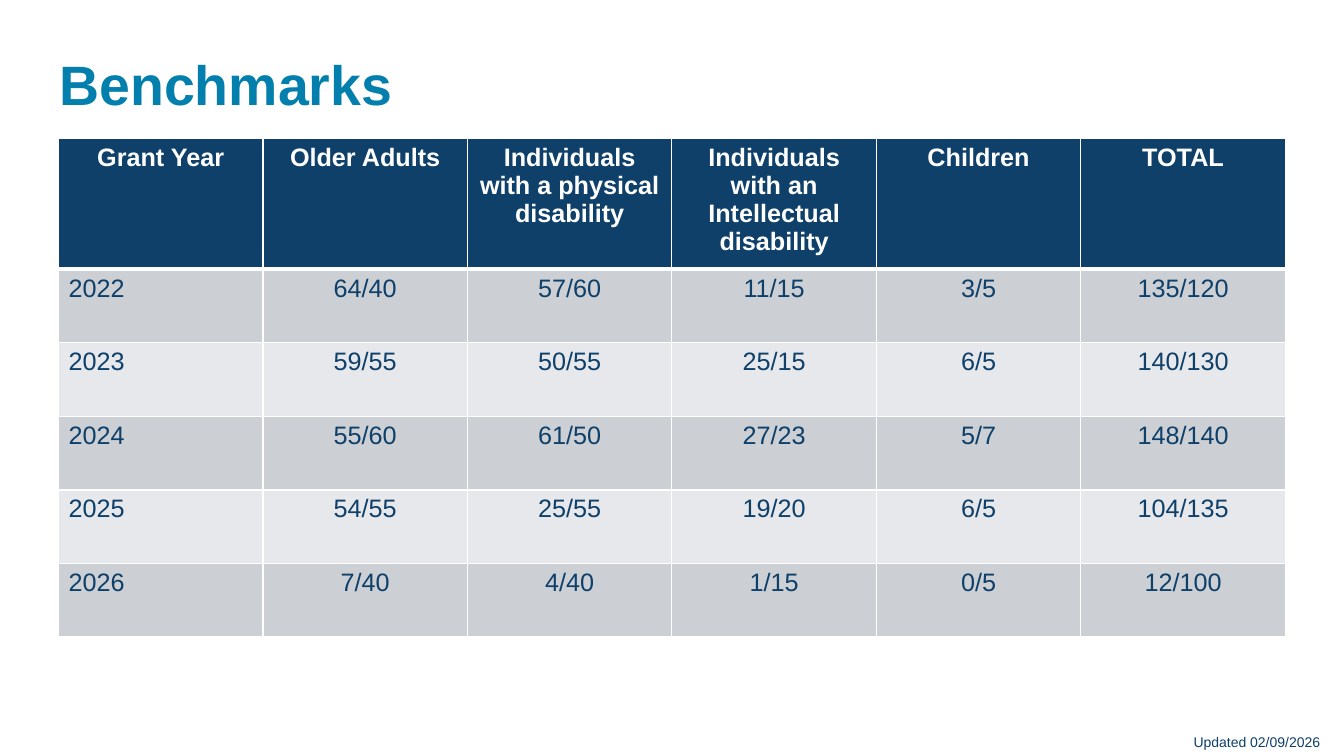
import pptx
import pptx.dml.color
import pptx.enum.text
import pptx.oxml
import pptx.oxml.ns
import pptx.util
from pptx.util import Inches

COLORS = {
    "title": "037FAE",
    "navy": "0E406A",
    "white": "FFFFFF",
    "band_dark": "CCCFD4",
    "band_light": "E7E8EB",
}
ALIGN = pptx.enum.text.PP_ALIGN


def add_run(paragraph, text, size, color, bold=False):
    run = paragraph.add_run()
    run.text = text
    run.font.name = "Arial"
    run.font.size = pptx.util.Pt(size)
    run.font.bold = bold
    run.font.color.rgb = pptx.dml.color.RGBColor.from_string(COLORS[color])


def add_borders(cell, widths):
    properties = cell._tc.get_or_add_tcPr()
    for index, (side, points) in enumerate(widths.items()):
        properties.insert(index, pptx.oxml.parse_xml(
            f'<a:{side} {pptx.oxml.ns.nsdecls("a")} w="{pptx.util.Pt(points)}">'
            f'<a:solidFill><a:srgbClr val="{COLORS["white"]}"/></a:solidFill></a:{side}>'))


presentation = pptx.Presentation()
presentation.slide_width = Inches(13.33)
presentation.slide_height = Inches(7.5)
slide = presentation.slides.add_slide(presentation.slide_layouts[6])

# Title
title = slide.shapes.add_textbox(Inches(0.49), Inches(0.57), Inches(12.35), Inches(0.6))
title.text_frame.word_wrap = True
title.text_frame.vertical_anchor = pptx.enum.text.MSO_ANCHOR.MIDDLE
paragraph = title.text_frame.paragraphs[0]
paragraph.line_spacing = 0.9
add_run(paragraph, "Benchmarks", 39.6, "title", bold=True)

# Benchmark table
benchmarks = [
    ["Grant Year", "Older Adults", "Individuals with a physical disability",
     "Individuals with an Intellectual disability", "Children", "TOTAL"],
    ["2022", "64/40", "57/60", "11/15", "3/5", "135/120"],
    ["2023", "59/55", "50/55", "25/15", "6/5", "140/130"],
    ["2024", "55/60", "61/50", "27/23", "5/7", "148/140"],
    ["2025", "54/55", "25/55", "19/20", "6/5", "104/135"],
    ["2026", "7/40", "4/40", "1/15", "0/5", "12/100"],
]
table_shape = slide.shapes.add_table(
    len(benchmarks), len(benchmarks[0]),
    Inches(0.58), Inches(1.37), Inches(12.17), Inches(4.96))
table = table_shape.table
for row_index, values in enumerate(benchmarks):
    is_header = row_index == 0
    table.rows[row_index].height = Inches(0.97 if is_header else 0.73)
    if is_header:
        fill, text_color = "navy", "white"
    else:
        fill, text_color = ("band_dark" if row_index % 2 else "band_light"), "navy"
    # A thicker rule separates the header from the body
    borders = {"lnL": 1, "lnR": 1, "lnT": 3 if row_index == 1 else 1, "lnB": 3 if is_header else 1}
    for column_index, value in enumerate(values):
        cell = table.cell(row_index, column_index)
        cell.fill.solid()
        cell.fill.fore_color.rgb = pptx.dml.color.RGBColor.from_string(COLORS[fill])
        add_borders(cell, borders)
        paragraph = cell.text_frame.paragraphs[0]
        paragraph.alignment = ALIGN.CENTER if is_header or column_index else ALIGN.LEFT
        add_run(paragraph, value, 18, text_color, bold=is_header)
table_shape.height = Inches(4.96)

# Update date
updated = slide.shapes.add_textbox(Inches(11.74), Inches(7.23), Inches(1.46), Inches(0.27))
updated.text_frame.word_wrap = False
updated.text_frame.auto_size = pptx.enum.text.MSO_AUTO_SIZE.SHAPE_TO_FIT_TEXT
add_run(updated.text_frame.paragraphs[0], "Updated 02/09/2026", 10, "navy")

presentation.save("out.pptx")
